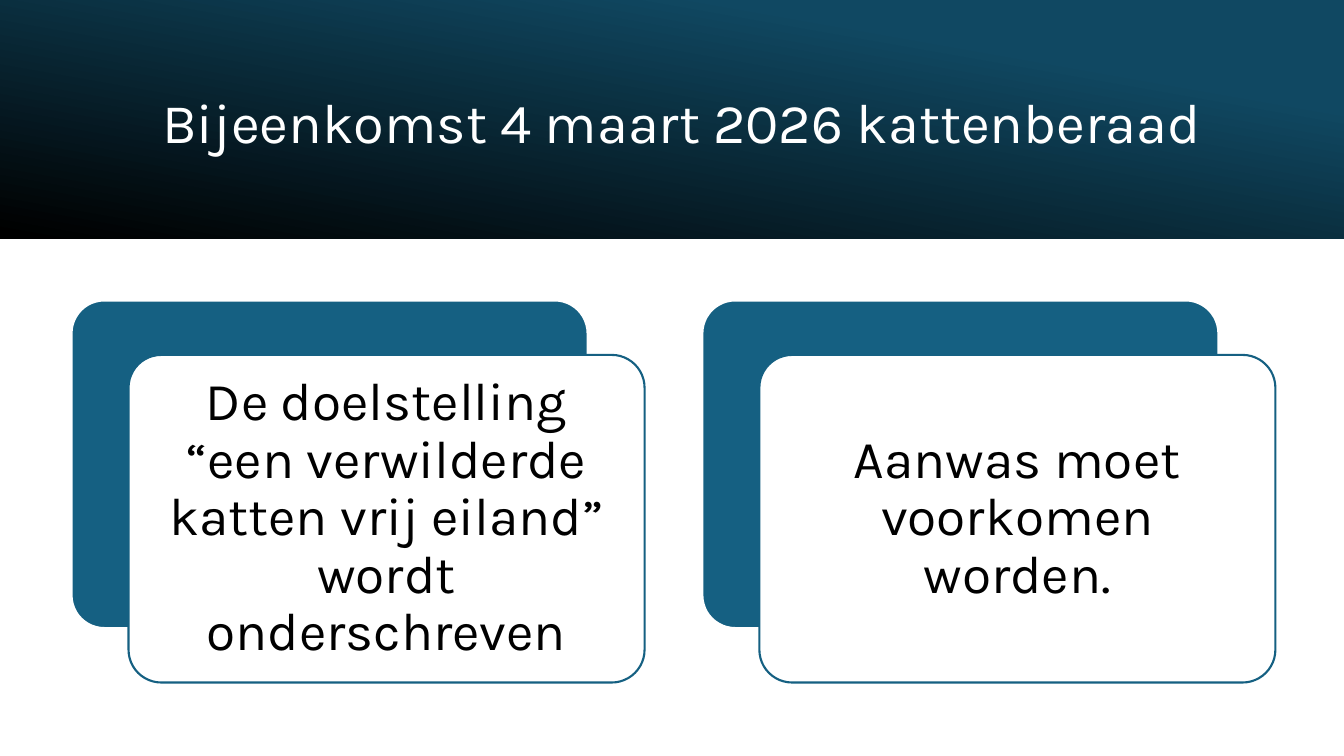
"""Build the slide on the cat council meeting of 4 March 2026."""
import pptx
import pptx.util
import pptx.dml.color
import pptx.enum.shapes
import pptx.enum.text
import pptx.oxml.ns
import lxml.etree

Pt = pptx.util.Pt
SHAPES = pptx.enum.shapes.MSO_SHAPE
COLOURS = {"white": "FFFFFF", "black": "000000", "blue": "156082",
           "deep": "104862", "navy": "0B3041"}


def paint(color, name, opacity=100):
    color.rgb = pptx.dml.color.RGBColor.from_string(COLOURS[name])
    if opacity < 100:
        holder = color._xFill if hasattr(color, "_xFill") else color._color._xClr
        alpha = lxml.etree.SubElement(holder, pptx.oxml.ns.qn("a:alpha"))
        alpha.set("val", str(opacity * 1000))


def write(left, top, width, height, text, size, color, align, inset):
    box = page.shapes.add_textbox(Pt(left), Pt(top), Pt(width), Pt(height))
    frame = box.text_frame
    frame.word_wrap = True
    frame.vertical_anchor = pptx.enum.text.MSO_ANCHOR.MIDDLE
    frame.margin_left = frame.margin_right = Pt(inset[0])
    frame.margin_top = frame.margin_bottom = Pt(inset[1])
    para = frame.paragraphs[0]
    para.alignment = align
    para.line_spacing = 0.9
    span = para.add_run()
    span.text = text
    span.font.size = Pt(size)
    span.font.name = "Karla"
    paint(span.font.color, color)


deck = pptx.Presentation()
deck.slide_width, deck.slide_height = Pt(960), Pt(540)
page = deck.slides.add_slide(deck.slide_layouts[6])

BAND = 170.7
bands = [
    (0, 0, 960, BAND, 0, 330, [(0, "black", 96), (1, "deep", 100)]),
    (636.5, 0, 322.8, BAND, 0, 320, [(0.19, "navy", 68), (1, "blue", 48)]),
    ((960 - BAND) / 2, (BAND - 960) / 2, BAND, 960, 270, 350,
     [(0.23, "deep", 16), (0.99, "black", 45)]),
]
for left, top, width, height, turn, angle, stops in bands:
    band = page.shapes.add_shape(SHAPES.RECTANGLE, Pt(left), Pt(top), Pt(width), Pt(height))
    band.shadow.inherit = False
    band.rotation = turn
    band._element.spPr.xfrm.set("flipH", "1")
    band.line.fill.background()
    band.fill.gradient()
    band.fill.gradient_angle = 360 - angle
    for stop, (position, color, opacity) in zip(band.fill.gradient_stops, stops):
        stop.position = position
        paint(stop.color, color, opacity)

write(108.7, 27.4, 765.4, 123.8, "Bijeenkomst 4 maart 2026 kattenberaad", 40, "white",
      pptx.enum.text.PP_ALIGN.LEFT, (7.2, 3.6))

CARD_WIDTH, CARD_HEIGHT = 368.6, 234
CARD_LEFT, CARD_TOP, CARD_STEP = 51.1, 214.6, 450.6
SHIFT_X, SHIFT_Y, PADDING = 40.7, 38.9, 6.9
decisions = ["De doelstelling “een verwilderde katten vrij eiland” wordt onderschreven",
             "Aanwas moet voorkomen worden."]
for index, decision in enumerate(decisions):
    left = CARD_LEFT + index * CARD_STEP
    front_left, front_top = left + SHIFT_X, CARD_TOP + SHIFT_Y
    for x, y, fill, opacity, edge in [(left, CARD_TOP, "blue", 100, "white"),
                                      (front_left, front_top, "white", 90, "blue")]:
        card = page.shapes.add_shape(SHAPES.ROUNDED_RECTANGLE, Pt(x), Pt(y),
                                     Pt(CARD_WIDTH), Pt(CARD_HEIGHT))
        card.shadow.inherit = False
        card.adjustments[0] = 0.1
        card.fill.solid()
        paint(card.fill.fore_color, fill, opacity)
        paint(card.line.color, edge)
        card.line.width = Pt(1.5)
    write(front_left + PADDING, front_top + PADDING, CARD_WIDTH - 2 * PADDING,
          CARD_HEIGHT - 2 * PADDING, decision, 38, "black",
          pptx.enum.text.PP_ALIGN.CENTER, (11.5, 11.5))

deck.save("out.pptx")
